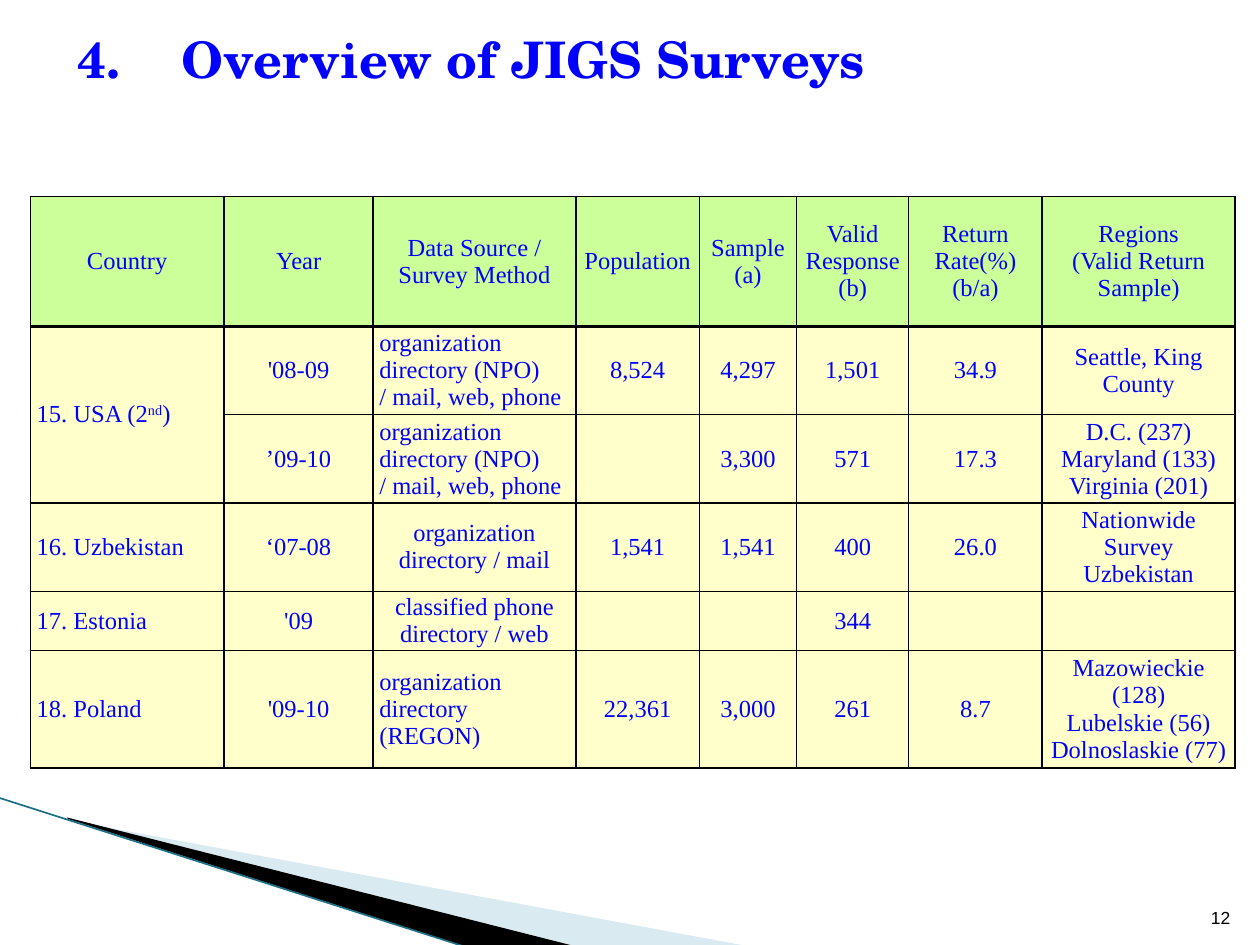
from dataclasses import astuple, dataclass

import pptx
import pptx.dml.color
import pptx.enum.shapes
import pptx.enum.text
import pptx.oxml
import pptx.oxml.ns
import pptx.util

Cm = pptx.util.Cm
Align = pptx.enum.text.PP_ALIGN
Anchor = pptx.enum.text.MSO_ANCHOR


@dataclass(frozen=True)
class Theme:
    blue: str = "0000FF"
    black: str = "000000"
    header_fill: str = "CCFF99"
    body_fill: str = "FFFFCC"
    pale_wedge: str = "A0CBDC"
    edge: str = "1B6F84"
    title_font: str = "TeX Gyre Schola"
    table_font: str = "Times New Roman"
    number_font: str = "Arial"
    title_size: float = 28.8
    table_size: float = 14
    number_size: float = 10
    border: float = 1
    heavy_border: float = 1.5


@dataclass(frozen=True)
class Survey:
    country: str
    year: str
    source: str
    population: str
    sample: str
    valid: str
    rate: str
    regions: str


THEME = Theme()
HEADINGS = Survey(
    "Country", "Year", "Data Source / Survey Method", "Population",
    "Sample\n(a)", "Valid\nResponse(b)", "Return\nRate(%)\n(b/a)",
    "Regions\n(Valid Return Sample)",
)
NPO_DIRECTORY = "organization directory (NPO)\n/ mail, web, phone"
REGON_DIRECTORY = "organization directory (REGON)"
LEFT_ALIGNED_SOURCES = (NPO_DIRECTORY, REGON_DIRECTORY)
SURVEYS = [
    Survey("15. USA (2^nd^)", "'08-09", NPO_DIRECTORY, "8,524", "4,297",
           "1,501", "34.9", "Seattle, King County"),
    Survey("", "’09-10", NPO_DIRECTORY, "", "3,300", "571", "17.3",
           "D.C. (237)\nMaryland (133)\nVirginia (201)"),
    Survey("16. Uzbekistan", "‘07-08", "organization directory / mail",
           "1,541", "1,541", "400", "26.0", "Nationwide Survey Uzbekistan"),
    Survey("17. Estonia", "'09", "classified phone directory / web",
           "", "", "344", "", ""),
    Survey("18. Poland", "'09-10", REGON_DIRECTORY, "22,361", "3,000",
           "261", "8.7",
           "Mazowieckie (128)\nLubelskie (56)\nDolnoslaskie (77)"),
]
COLUMN_WIDTHS = [3.91, 3, 4.09, 2.49, 1.96, 2.26, 2.69, 3.89]
ROW_HEIGHTS = [2.62, 1.78, 1.78, 1.78, 1.19, 2.36]


def rgb(colour: str) -> pptx.dml.color.RGBColor:
    return pptx.dml.color.RGBColor.from_string(colour)


def write_text(frame, text: str, *, font: str, size: float, colour: str,
               bold: bool = False, align=Align.LEFT) -> None:
    """Write one paragraph per line; text between carets is superscript."""
    for index, line in enumerate(text.split("\n")):
        paragraph = frame.paragraphs[0] if index == 0 else frame.add_paragraph()
        paragraph.alignment = align
        paragraph.font.size = pptx.util.Pt(size)
        for part_index, part in enumerate(line.split("^")):
            if not part:
                continue
            run = paragraph.add_run()
            run.text = part
            run.font.name = font
            run.font.size = pptx.util.Pt(size)
            run.font.bold = bold
            run.font.color.rgb = rgb(colour)
            if part_index % 2:
                run.font._element.set("baseline", "30000")


def remove_shadow(connector) -> None:
    properties = connector._element.spPr
    properties.append(properties.makeelement(pptx.oxml.ns.qn("a:effectLst"), {}))


def draw_wedge(slide, points: list[tuple[float, float]], colour: str,
               opacity: int = 100) -> None:
    start, *rest = [(Cm(x), Cm(y)) for x, y in points]
    builder = slide.shapes.build_freeform(*start, scale=1.0)
    builder.add_line_segments(rest, close=True)
    wedge = builder.convert_to_shape()
    wedge.shadow.inherit = False
    wedge.line.fill.background()
    wedge.fill.solid()
    wedge.fill.fore_color.rgb = rgb(colour)
    if opacity < 100:
        colour_element = wedge._element.spPr.find(".//" + pptx.oxml.ns.qn("a:srgbClr"))
        alpha = colour_element.makeelement(
            pptx.oxml.ns.qn("a:alpha"), {"val": str(opacity * 1000)})
        colour_element.append(alpha)


def draw_corner(slide) -> None:
    draw_wedge(slide, [(1.4, 16.54), (15.11, 19.08), (11.58, 19.08), (1.4, 16.51)],
               THEME.pale_wedge, opacity=40)
    draw_wedge(slide, [(1.35, 16.48), (11.61, 19.08), (9.45, 19.1), (1.37, 16.51)],
               THEME.black)
    edge = slide.shapes.add_connector(
        pptx.enum.shapes.MSO_CONNECTOR.STRAIGHT,
        Cm(-0.03), Cm(16.08), Cm(9.42), Cm(19.1))
    edge.line.color.rgb = rgb(THEME.edge)
    edge.line.width = pptx.util.Pt(0.95)
    remove_shadow(edge)


def set_borders(cell, top: float, bottom: float) -> None:
    """Place the four border lines ahead of the cell's fill, as the schema asks."""
    properties = cell._tc.get_or_add_tcPr()
    widths = {"L": THEME.border, "R": THEME.border, "T": top, "B": bottom}
    for index, (side, width) in enumerate(widths.items()):
        properties.insert(index, pptx.oxml.parse_xml(
            f'<a:ln{side} {pptx.oxml.ns.nsdecls("a")} w="{pptx.util.Pt(width)}">'
            f'<a:solidFill><a:srgbClr val="{THEME.black}"/></a:solidFill>'
            f'</a:ln{side}>'))


def cell_alignment(row: int, column: int, text: str):
    if row and column == 0:
        return Align.JUSTIFY
    return Align.LEFT if text in LEFT_ALIGNED_SOURCES else Align.CENTER


def draw_survey_table(slide) -> None:
    table = slide.shapes.add_table(
        len(ROW_HEIGHTS), len(COLUMN_WIDTHS), Cm(0.61), Cm(3.96),
        Cm(sum(COLUMN_WIDTHS)), Cm(sum(ROW_HEIGHTS))).table
    table.horz_banding = False
    for column, width in zip(table.columns, COLUMN_WIDTHS):
        column.width = Cm(width)
    for row, height in zip(table.rows, ROW_HEIGHTS):
        row.height = Cm(height)
    for row, survey in enumerate([HEADINGS, *SURVEYS]):
        for column, text in enumerate(astuple(survey)):
            cell = table.cell(row, column)
            cell.margin_left = cell.margin_right = Cm(0.13)
            cell.margin_top = cell.margin_bottom = 0
            cell.vertical_anchor = Anchor.MIDDLE
            cell.fill.solid()
            cell.fill.fore_color.rgb = rgb(THEME.body_fill if row else THEME.header_fill)
            set_borders(cell,
                        top=THEME.heavy_border if row == 1 else THEME.border,
                        bottom=THEME.heavy_border if row == 0 else THEME.border)
            write_text(cell.text_frame, text, font=THEME.table_font,
                       size=THEME.table_size, colour=THEME.blue,
                       align=cell_alignment(row, column, text))
    table.cell(1, 0).merge(table.cell(2, 0))


def write_title(slide) -> None:
    title = slide.shapes.title
    title.left, title.top, title.width, title.height = Cm(1.3), Cm(0.56), Cm(22.86), Cm(3.2)
    frame = title.text_frame
    frame.auto_size = pptx.enum.text.MSO_AUTO_SIZE.NONE
    frame.vertical_anchor = Anchor.TOP
    frame.margin_top = 0
    write_text(frame, "4.　 Overview of JIGS Surveys", font=THEME.title_font,
               size=THEME.title_size, colour=THEME.blue, bold=True)


def write_page_number(slide) -> None:
    frame = slide.shapes.add_textbox(Cm(24.03), Cm(17.81), Cm(1.02), Cm(1.02)).text_frame
    frame.word_wrap = True
    frame.vertical_anchor = Anchor.BOTTOM
    write_text(frame, "12", font=THEME.number_font, size=THEME.number_size,
               colour=THEME.black, align=Align.RIGHT)


def main() -> None:
    presentation = pptx.Presentation()
    presentation.slide_width, presentation.slide_height = Cm(25.4), Cm(19.05)
    slide = presentation.slides.add_slide(presentation.slide_layouts[5])
    draw_corner(slide)
    write_page_number(slide)
    write_title(slide)
    draw_survey_table(slide)
    presentation.save("out.pptx")


if __name__ == "__main__":
    main()
